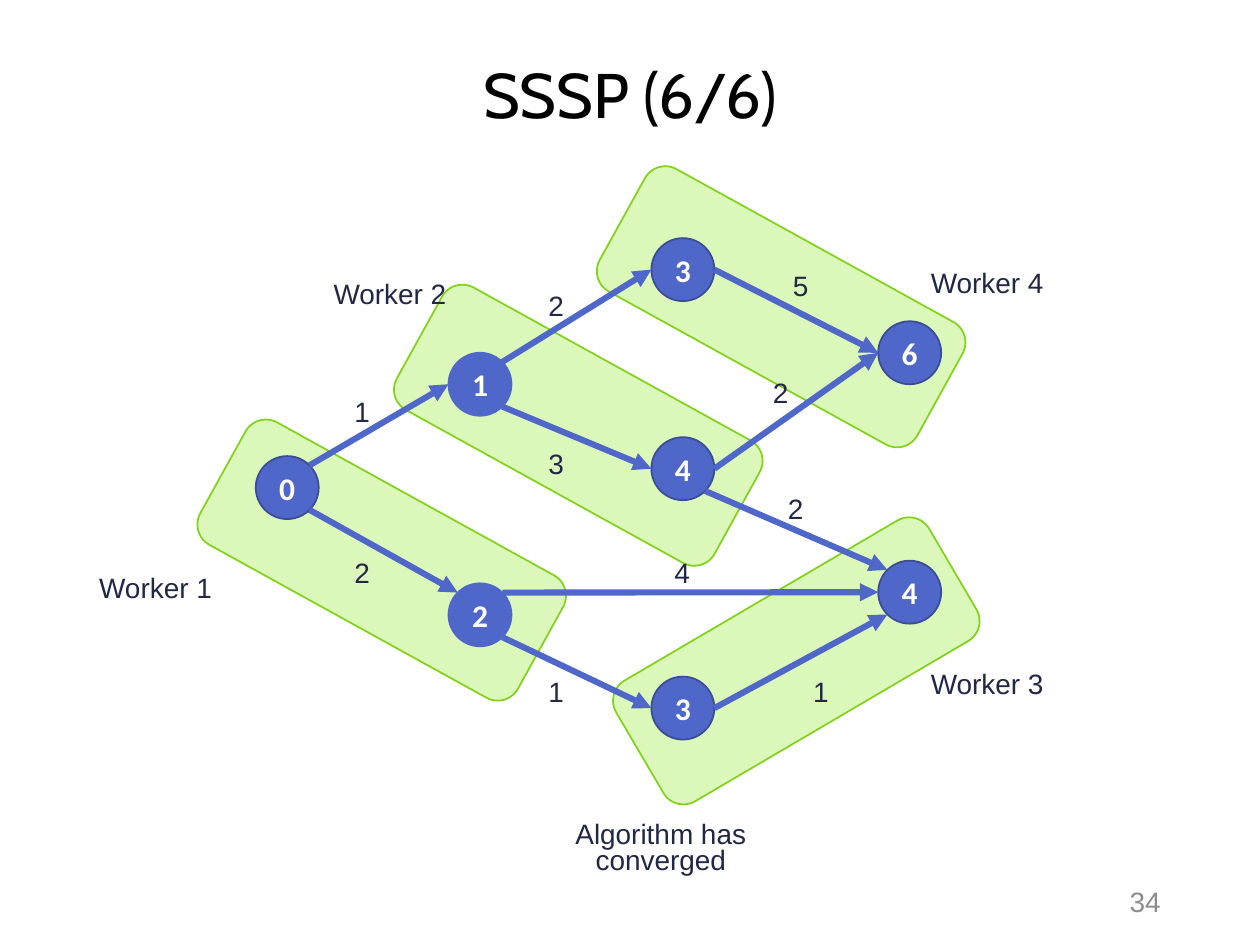
from lxml import etree
from pptx import Presentation
from pptx import util as u
from pptx.dml.color import RGBColor
from pptx.enum import shapes as sh, text as tx
from pptx.oxml.ns import qn

BLUE = RGBColor(0x4E, 0x67, 0xC8)
NAVY = RGBColor(0x3A, 0x4C, 0x94)
LIME = RGBColor(0xDC, 0xF7, 0xBA)
GREEN = RGBColor(0x81, 0xD3, 0x1A)
INK = RGBColor(0x21, 0x27, 0x45)
GRAY = RGBColor(0x8C, 0x8C, 0x8C)
BLACK = RGBColor(0, 0, 0)
WHITE = RGBColor(255, 255, 255)

deck = Presentation()
deck.slide_width, deck.slide_height = u.Inches(10), u.Inches(7.5)
slide = deck.slides.add_slide(deck.slide_layouts[6])
CELL = deck.slide_width / 100  # square grid: 100 columns, 75 rows


def grid(*cells):
    """Turn counts of columns or rows into lengths."""
    return [u.Emu(round(n * CELL)) for n in cells]


def write(box, words, size, color, font="Arial", bold=False,
          align=tx.PP_ALIGN.CENTER, anchor=tx.MSO_ANCHOR.MIDDLE):
    frame = box.text_frame
    frame.text = words
    frame.word_wrap = True
    frame.vertical_anchor = anchor
    para = frame.paragraphs[0]
    para.alignment = align
    face = para.runs[0].font
    face.name, face.size, face.bold = font, u.Pt(size), bold
    face.color.rgb = color
    return para


# Workers: tilted panels behind the graph
PANEL_W, PANEL_H = 28.8, 11.1
for left, top, turn in [(31.5, 28.2, 28.9), (47.6, 18.8, 28.9),
                        (48.8, 46.9, 329.6), (15.9, 38.9, 28.9)]:
    panel = slide.shapes.add_shape(sh.MSO_SHAPE.ROUNDED_RECTANGLE,
                                   *grid(left, top, PANEL_W, PANEL_H))
    panel.rotation = turn
    panel.shadow.inherit = False
    panel.fill.solid()
    panel.fill.fore_color.rgb = LIME
    panel.line.color.rgb = GREEN
    panel.line.width = u.Pt(1)

title = slide.shapes.add_textbox(*grid(6.9, 0.5, 86.2, 14.5))
write(title, "SSSP (6/6)", 36, BLACK, "Cabin").line_spacing = 0.9
page = slide.shapes.add_textbox(*grid(83.2, 69.5, 9.9, 4))
write(page, "34", 16, GRAY, align=tx.PP_ALIGN.RIGHT)

# Nodes: centre column, centre row, distance, outline
R = 2.5
COLS = [22.8, 38.1, 54.2, 72.2]
nodes = {
    "start": (COLS[0], 38.7, "0", NAVY),
    "upper": (COLS[1], 30.5, "1", BLUE),
    "lower": (COLS[1], 48.8, "2", BLUE),
    "top": (COLS[2], 21.4, "3", NAVY),
    "mid": (COLS[2], 37.2, "4", NAVY),
    "right": (COLS[3], 47, "4", NAVY),
    "base": (COLS[2], 56.2, "3", NAVY),
    "end": (COLS[3], 28, "6", NAVY),
}
for x, y, dist, edge in nodes.values():
    node = slide.shapes.add_shape(sh.MSO_SHAPE.OVAL,
                                  *grid(x - R, y - R, 2 * R, 2 * R))
    node.shadow.inherit = False
    node.fill.solid()
    node.fill.fore_color.rgb = BLUE
    node.line.color.rgb = edge
    node.line.width = u.Pt(1)
    write(node, dist, 18, WHITE, "Calibri", True)

# Arrows: each leaves and meets a node at a compass point of its rim
D = R * 0.5 ** 0.5
RIM = {"E": (R, 0), "W": (-R, 0), "NE": (D, -D), "SE": (D, D),
       "NW": (-D, -D), "SW": (-D, D)}
for tail, out, head, into in [
    ("start", "NE", "upper", "W"), ("start", "SE", "lower", "NW"),
    ("lower", "SE", "base", "W"), ("upper", "NE", "top", "W"),
    ("upper", "SE", "mid", "W"), ("base", "E", "right", "SW"),
    ("top", "E", "end", "W"), ("mid", "E", "end", "W"),
    ("lower", "NE", "right", "W"), ("mid", "SE", "right", "NW"),
]:
    ends = [nodes[name][i] + RIM[side][i]
            for name, side in [(tail, out), (head, into)] for i in (0, 1)]
    arrow = slide.shapes.add_connector(sh.MSO_CONNECTOR.STRAIGHT, *grid(*ends))
    arrow.line.color.rgb = BLUE
    arrow.line.width = u.Pt(3.5)
    etree.SubElement(arrow.line._get_or_add_ln(), qn("a:tailEnd"), type="triangle")
    etree.SubElement(arrow._element.spPr, qn("a:effectLst"))

# Labels: left column, top row, width, words
COST, NAME = 3.3, 14.3
for left, top, wide, words in [
    (27.1, 31.3, COST, "1"), (27.1, 44.1, COST, "2"),
    (52.5, 44.1, COST, "4"), (42.5, 53.6, COST, "1"),
    (63.5, 53.6, COST, "1"), (42.5, 35.5, COST, "3"),
    (60.3, 29.8, COST, "2"), (61.9, 21.3, COST, "5"),
    (42.5, 22.9, COST, "2"), (61.5, 39, COST, "2"),
    (5.2, 45.3, NAME, "Worker 1"), (23.8, 22, NAME, "Worker 2"),
    (71.2, 52.9, NAME, "Worker 3"), (71.2, 21.1, NAME, "Worker 4"),
    (39.8, 64.8, 25.3, "Algorithm has converged"),
]:
    label = slide.shapes.add_textbox(*grid(left, top, wide, 3.4))
    para = write(label, words, 16, INK, anchor=tx.MSO_ANCHOR.TOP)
    para.line_spacing = 0.8
    para.space_before = u.Pt(10)

deck.save("out.pptx")
